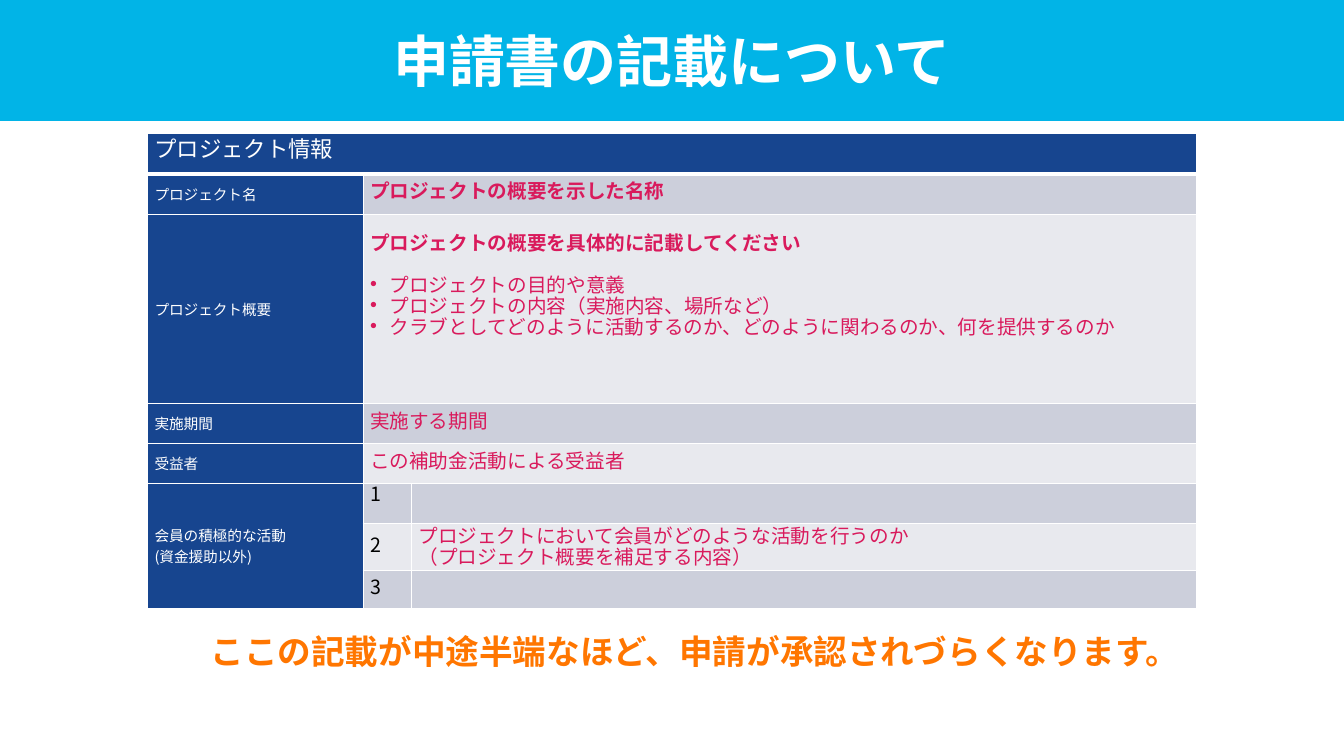
"""Build the slide on how to fill in the project application form."""
from lxml.etree import SubElement
from pptx import Presentation
from pptx.dml.color import RGBColor
from pptx.enum.text import MSO_ANCHOR as ANCHOR, PP_ALIGN as ALIGN
from pptx.oxml import parse_xml
from pptx.oxml.ns import nsdecls, qn
from pptx.util import Pt

FONT = "Noto Sans CJK JP"
COLORS = {
    "banner": "01B4E7", "label": "17458F", "odd": "CCCFDB", "even": "E8E9EE",
    "white": "FFFFFF", "hint": "D91A5C", "number": "000000", "warning": "FF7600",
}
COLUMNS = [154, 34.5, 561]
ROWS = [28.8, 28.8, 135, 28.6, 28.6, 29, 33.5, 27]
LABELS = {
    1: ["プロジェクト名"], 2: ["プロジェクト概要"], 3: ["実施期間"], 4: ["受益者"],
    5: ["会員の積極的な活動", "(資金援助以外)"],
}
HINTS = {
    1: ["プロジェクトの概要を示した名称"],
    2: ["プロジェクトの概要を具体的に記載してください", "プロジェクトの目的や意義",
        "プロジェクトの内容（実施内容、場所など）",
        "クラブとしてどのように活動するのか、どのように関わるのか、何を提供するのか"],
    3: ["実施する期間"],
    4: ["この補助金活動による受益者"],
}
ACTIVITY = ["プロジェクトにおいて会員がどのような活動を行うのか", "（プロジェクト概要を補足する内容）"]


def style_runs(p, size, color, bold=False):
    """Give every run of a paragraph its font, size and colour."""
    for r in p.runs:
        r.font.size, r.font.bold, r.font.name = Pt(size), bold, FONT
        r.font.color.rgb = RGBColor.from_string(COLORS[color])
        SubElement(r.font._element, qn("a:ea"), typeface=FONT)


def fill_shape(target, color):
    """Fill a shape or cell with a named colour."""
    target.fill.solid()
    target.fill.fore_color.rgb = RGBColor.from_string(COLORS[color])


def add_title(s, text):
    """Turn the title placeholder into the banner."""
    sp = s.shapes.title
    sp.left, sp.top, sp.width, sp.height = Pt(0), Pt(0), Pt(960), Pt(86.4)
    fill_shape(sp, "banner")
    sp.text_frame.text = text
    sp.text_frame.vertical_anchor = ANCHOR.MIDDLE
    p = sp.text_frame.paragraphs[0]
    p.alignment = ALIGN.CENTER
    style_runs(p, 40, "white", True)


def add_warning(s, text):
    """Add the warning line below the table."""
    sp = s.shapes.add_textbox(Pt(143.3), Pt(447.1), Pt(766.8), Pt(36))
    tf = sp.text_frame
    tf.word_wrap = True
    tf.text = text
    p = tf.paragraphs[0]
    p.space_before = p.space_after = Pt(10)
    style_runs(p, 24, "warning", True)


def set_borders(cell, row):
    """Draw white borders, heavier under the header row."""
    widths = {"L": 1, "R": 1, "T": 3 if row == 1 else 1, "B": 1 if row else 3}
    tc_pr = cell._tc.get_or_add_tcPr()
    for i, (side, width) in enumerate(widths.items()):
        tc_pr.insert(i, parse_xml(
            f'<a:ln{side} {nsdecls("a")} w="{Pt(width)}"><a:solidFill>'
            f'<a:srgbClr val="{COLORS["white"]}"/></a:solidFill></a:ln{side}>'))


def write_cell(cell, lines, size, color, bold=False):
    """Write paragraphs with fixed line spacing into a cell."""
    cell.text_frame.text = "\n".join(lines)
    for p in cell.text_frame.paragraphs:
        p.alignment, p.line_spacing = ALIGN.JUSTIFY, Pt(15)
        style_runs(p, size, color, bold)


def anchor_top(cell, margin):
    """Start the text of a cell at a margin below its top border."""
    cell.vertical_anchor, cell.margin_top = ANCHOR.TOP, Pt(margin)


def add_bullet(p):
    """Give a paragraph a bullet with a hanging indent."""
    p_pr = p._p.get_or_add_pPr()
    p_pr.set("marL", str(Pt(14)))
    p_pr.set("indent", str(-Pt(14)))
    SubElement(p_pr, qn("a:buFont"), typeface="Arial")
    SubElement(p_pr, qn("a:buChar"), char="•")


def format_overview(cell):
    """Lay out the overview cell as a bold lead line and bullets."""
    anchor_top(cell, 15)
    lead, *bullets = cell.text_frame.paragraphs
    lead.runs[0].font.bold = True
    for p in bullets:
        add_bullet(p)
    bullets[0].space_before = Pt(15)


def add_form(s):
    """Add the application form table."""
    frame = s.shapes.add_table(len(ROWS), len(COLUMNS), Pt(105.4), Pt(95.4),
                               Pt(sum(COLUMNS)), Pt(sum(ROWS)))
    table = frame.table
    for column, width in zip(table.columns, COLUMNS):
        column.width = Pt(width)
    for i, height in enumerate(ROWS):
        table.rows[i].height = Pt(height)
        for j in range(len(COLUMNS)):
            cell = table.cell(i, j)
            cell.margin_left = cell.margin_right = Pt(5)
            cell.margin_top = cell.margin_bottom = Pt(0)
            cell.vertical_anchor = ANCHOR.MIDDLE
            fill_shape(cell, "label" if i == 0 or j == 0 else "odd" if i % 2 else "even")
            set_borders(cell, i)
            write_cell(cell, [""], 14, "hint")
    table.cell(0, 0).merge(table.cell(0, 2))
    table.cell(5, 0).merge(table.cell(7, 0))
    write_cell(table.cell(0, 0), ["プロジェクト情報"], 16, "white")
    for i, lines in LABELS.items():
        write_cell(table.cell(i, 0), lines, 10.5, "white")
    for i, lines in HINTS.items():
        table.cell(i, 1).merge(table.cell(i, 2))
        write_cell(table.cell(i, 1), lines, 14, "hint", i == 1)
    format_overview(table.cell(2, 1))
    for number in range(1, 4):
        write_cell(table.cell(number + 4, 1), [str(number)], 14, "number")
    anchor_top(table.cell(5, 1), 2)
    write_cell(table.cell(6, 2), ACTIVITY, 14, "hint")
    anchor_top(table.cell(6, 2), 3.5)


def main():
    """Create the presentation and save it."""
    prs = Presentation()
    prs.slide_width, prs.slide_height = Pt(960), Pt(540)
    s = prs.slides.add_slide(prs.slide_layouts[5])
    add_title(s, "申請書の記載について")
    add_warning(s, "ここの記載が中途半端なほど、申請が承認されづらくなります。")
    add_form(s)
    prs.save("out.pptx")


if __name__ == "__main__":
    main()
